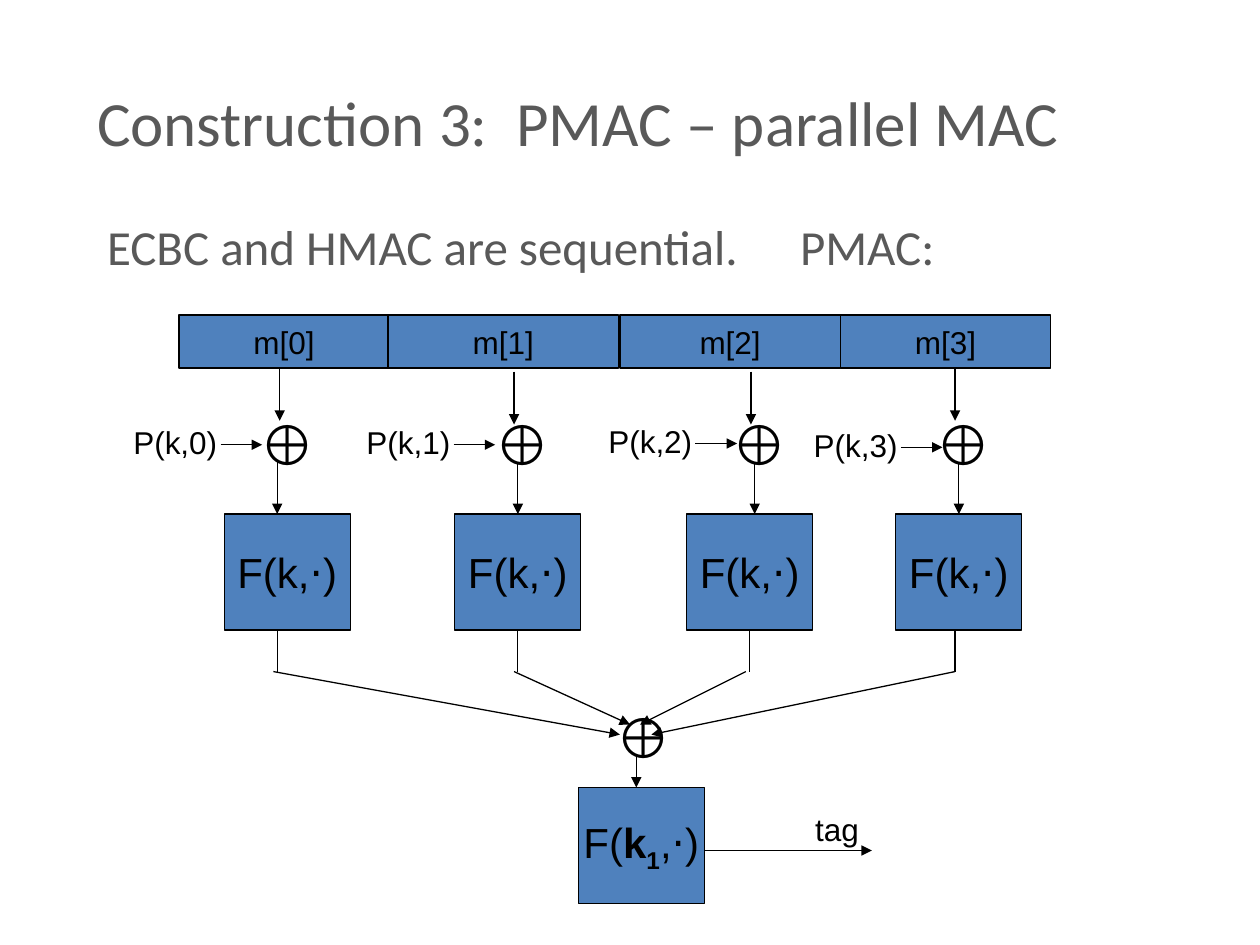
from dataclasses import dataclass

from pptx import Presentation
from pptx import util as u
from pptx.dml.color import RGBColor
from pptx.enum import shapes, text
from pptx.oxml.ns import qn
from lxml import etree


@dataclass(frozen=True)
class Theme:
    ink: str = "000000"
    heading: str = "595959"
    block: str = "4F81BD"
    heading_font: str = "Calibri"
    diagram_font: str = "Arial"
    title: int = 36
    body: int = 28
    xor: int = 32
    function: int = 24
    label: int = 18
    line: float = 0.75


@dataclass(frozen=True)
class Span:
    text: str
    bold: bool = False
    baseline: int = 0


@dataclass(frozen=True)
class Lane:
    """Horizontal places of one message block's path, in inches."""
    message: float
    message_width: float
    drop: float
    drop_top: float
    key: float
    key_top: float
    xor: float
    stem: float
    function: float
    leg: float
    merge_start: float
    merge_end: tuple[float, float]


THEME = Theme()
LANES = [
    Lane(1.42, 1.67, 2.22, 2.92, 0.96, 3.31, 1.96, 2.2, 1.78, 2.2, 2.17, (4.92, 5.83)),
    Lane(3.08, 1.83, 4.08, 2.95, 2.81, 3.31, 3.83, 4.11, 3.61, 4.11, 4.08, (5, 5.75)),
    Lane(4.92, 1.75, 5.96, 2.95, 4.73, 3.3, 5.71, 5.99, 5.45, 5.95, 5.92, (5.08, 5.75)),
    Lane(6.67, 1.67, 7.58, 2.92, 6.36, 3.33, 7.33, 7.61, 7.11, 7.58, 7.58, (5.17, 5.83)),
]
FUNCTION_WIDTH, FUNCTION_HEIGHT = 1, 0.92
FUNCTION_TOP, MERGE_TOP = 4.08, 5.33
TOP_SIDE, BOTTOM_SIDE = 0, 2


def write(shape, spans: list[Span], *, size: float, font: str = THEME.diagram_font,
          color: str = THEME.ink, align=text.PP_ALIGN.LEFT,
          anchor=text.MSO_ANCHOR.TOP, wrap: bool = False):
    frame = shape.text_frame
    frame.word_wrap = wrap
    frame.vertical_anchor = anchor
    para = frame.paragraphs[0]
    para.alignment = align
    for span in spans:
        run = para.add_run()
        run.text = span.text
        run.font.size = u.Pt(size)
        run.font.name = font
        run.font.bold = span.bold
        run.font.color.rgb = RGBColor.from_string(color)
        if span.baseline:
            run.font._element.set("baseline", str(span.baseline * 1000))
    return para


def place(shape, left: float, top: float, width: float, height: float) -> None:
    shape.left, shape.top = u.Inches(left), u.Inches(top)
    shape.width, shape.height = u.Inches(width), u.Inches(height)


def add_block(parent, left: float, top: float, width: float, height: float,
              spans: list[Span], size: float):
    box = parent.add_shape(shapes.MSO_SHAPE.RECTANGLE, u.Inches(left), u.Inches(top),
                           u.Inches(width), u.Inches(height))
    box.shadow.inherit = False
    box.fill.solid()
    box.fill.fore_color.rgb = RGBColor.from_string(THEME.block)
    box.line.color.rgb = RGBColor.from_string(THEME.ink)
    box.line.width = u.Pt(THEME.line)
    write(box, spans, size=size, align=text.PP_ALIGN.CENTER,
          anchor=text.MSO_ANCHOR.MIDDLE)
    return box


def add_function(parent, left: float, top: float, spans: list[Span]):
    return add_block(parent, left, top, FUNCTION_WIDTH, FUNCTION_HEIGHT, spans,
                     THEME.function)


def add_label(parent, left: float, top: float, width: float, height: float,
              words: str, size: float = THEME.label) -> None:
    box = parent.add_textbox(u.Inches(left), u.Inches(top),
                             u.Inches(width), u.Inches(height))
    write(box, [Span(words)], size=size)
    box.text_frame.auto_size = text.MSO_AUTO_SIZE.SHAPE_TO_FIT_TEXT


def add_xor(parent, left: float, top: float) -> None:
    add_label(parent, left, top, 0.55, 0.64, "⊕", THEME.xor)


def add_line(parent, start: tuple[float, float], end: tuple[float, float],
             arrow: bool = True):
    line = parent.add_connector(shapes.MSO_CONNECTOR.STRAIGHT,
                                *map(u.Inches, start + end))
    line.line.color.rgb = RGBColor.from_string(THEME.ink)
    line.line.width = u.Pt(THEME.line)
    if arrow:
        etree.SubElement(line.line._get_or_add_ln(), qn("a:tailEnd"), type="triangle")
    etree.SubElement(line._element.spPr, qn("a:effectLst"))
    return line


def draw_key(parent, lane: Lane, number: int) -> None:
    group = parent.add_group_shape().shapes
    middle = lane.key_top + 0.22
    add_line(group, (lane.key + 0.79, middle), (lane.key + 1.12, middle))
    add_label(group, lane.key, lane.key_top, 0.87, 0.4, f"P(k,{number})")


def draw_lane(parent, lane: Lane, number: int) -> None:
    add_block(parent, lane.message, 2.5, lane.message_width, 0.42,
              [Span(f"m[{number}]")], THEME.label)
    add_xor(parent, lane.xor, 3.2)
    add_line(parent, (lane.drop, lane.drop_top), (lane.drop, lane.drop_top + 0.42))
    box = add_function(parent, lane.function, FUNCTION_TOP, [Span("F(k,⋅)")])
    stem = add_line(parent, (lane.stem, 3.67), (lane.stem, FUNCTION_TOP))
    leg = add_line(parent, (lane.leg, FUNCTION_TOP + FUNCTION_HEIGHT),
                   (lane.leg, MERGE_TOP), arrow=False)
    centre = lane.function + FUNCTION_WIDTH / 2
    if abs(lane.stem - centre) < 0.01:
        stem.end_connect(box, TOP_SIDE)
    if abs(lane.leg - centre) < 0.01:
        leg.begin_connect(box, BOTTOM_SIDE)
    add_line(parent, (lane.merge_start, MERGE_TOP), lane.merge_end)
    draw_key(parent, lane, number)


def draw_tag(parent) -> None:
    add_xor(parent, 4.79, 5.53)
    add_function(parent, 4.59, 6.25, [Span("F("), Span("k", bold=True),
                                      Span("1", bold=True, baseline=-25), Span(",⋅)")])
    add_line(parent, (5.05, 6), (5.05, 6.25))
    add_line(parent, (5.59, 6.75), (6.92, 6.75))
    add_label(parent, 6.37, 6.38, 0.55, 0.4, "tag")


def draw_headings(page) -> None:
    title, body = page.placeholders
    style = dict(font=THEME.heading_font, color=THEME.heading, wrap=True)
    place(title, 0.67, 0.5, 8.5, 0.92)
    write(title, [Span("Construction 3:  PMAC – parallel MAC")], size=THEME.title,
          anchor=text.MSO_ANCHOR.MIDDLE, **style)
    place(body, 0.75, 1.67, 9, 5.08)
    para = write(body, [Span("ECBC and HMAC are sequential.\tPMAC:")],
                 size=THEME.body, **style)
    properties = para._p.get_or_add_pPr()
    properties.set("marL", "0")
    properties.set("indent", "0")
    etree.SubElement(properties, qn("a:buNone"))
    tabs = etree.SubElement(properties, qn("a:tabLst"))
    etree.SubElement(tabs, qn("a:tab"), pos=str(u.Inches(5.71)), algn="l")


def main() -> None:
    deck = Presentation()
    deck.slide_width, deck.slide_height = u.Inches(10), u.Inches(7.5)
    page = deck.slides.add_slide(deck.slide_layouts[1])
    draw_headings(page)
    for number, lane in enumerate(LANES):
        draw_lane(page.shapes, lane, number)
    draw_tag(page.shapes)
    deck.save("out.pptx")


if __name__ == "__main__":
    main()
